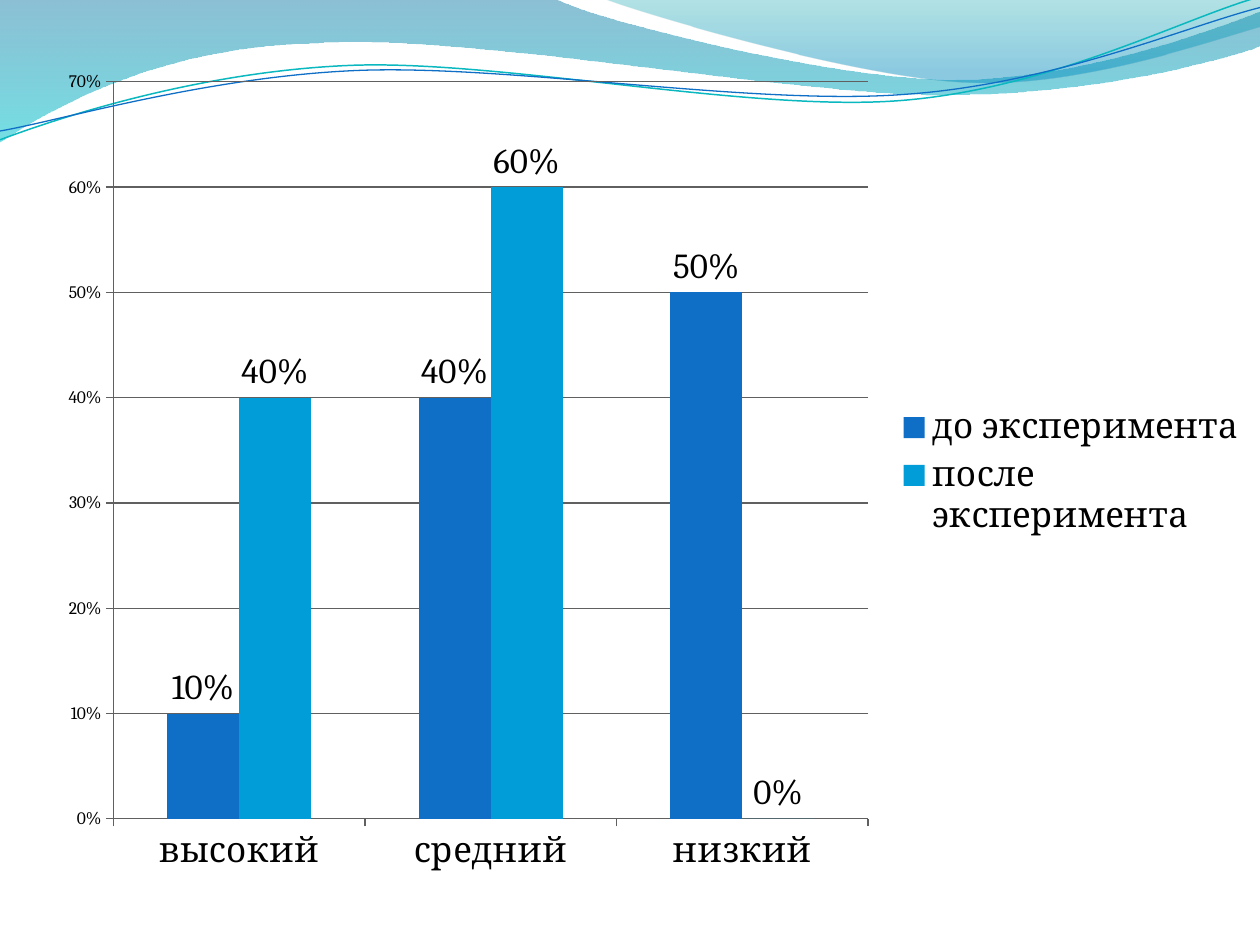
from lxml import etree
from pptx import Presentation
from pptx import util as u
from pptx.chart.data import CategoryChartData
from pptx.dml.color import RGBColor
from pptx.enum import chart as ch
from pptx.oxml import parse_xml
from pptx.oxml.ns import nsdecls, qn

FONT = "Cambria"
CHART_BOX = 0.35, 0.44, 9.65, 6.61  # left, top, width, height in inches
PLOT_BOX = 0.9, 0.65, 5.99, 5.85

# Waves: start point, then (x, y) lines or (x1, y1, x2, y2, x, y) curves, in inches
LEFT_WAVE = [(0, 0), (4.4, -0.01), (4.76, 0.17, 6.64, 0.63, 7.58, 0.63),
             (8.53, 0.63, 9.58, 0.26, 10, 0.09), (10.01, 0.36),
             (9.83, 0.44, 8.7, 0.76, 7.46, 0.75), (6.22, 0.75, 3.82, 0.28, 2.57, 0.34),
             (1.29, 0.36, 0.46, 0.83, -0.01, 1.13)]
RIGHT_WAVE = [(4.79, -0.01), (5.09, 0.11, 6.82, 0.62, 7.69, 0.65),
              (8.56, 0.69, 9.61, 0.32, 10, 0.21), (10, 0)]
TEAL_LINE = [(0, 1.11), (0.48, 0.93, 1.58, 0.57, 2.77, 0.52),
             (3.95, 0.47, 5.93, 0.89, 7.13, 0.8), (8.33, 0.71, 9.38, 0.15, 9.98, -0.02)]
BLUE_LINE = [(0, 1.04), (0.47, 0.96, 1.64, 0.61, 2.83, 0.56),
             (4.03, 0.51, 5.97, 0.84, 7.17, 0.75), (8.36, 0.67, 9.41, 0.21, 10, 0.06)]

LEVELS = ["высокий", "средний", "низкий"]
RESULTS = [("до эксперимента", [0.1, 0.4, 0.5], "0F6FC6"),
           ("после эксперимента", [0.4, 0.6, 0], "009DD9")]


def color(value):
    return RGBColor.from_string(value)


def add_outline(slide, segments, close):
    """Draw all points as lines, then join each curve's three points into a cubic."""
    start, *points = [(u.Inches(x), u.Inches(y)) for segment in segments
                      for x, y in zip(segment[::2], segment[1::2])]
    builder = slide.shapes.build_freeform(*start)
    builder.add_line_segments(points, close=close)
    outline = builder.convert_to_shape()
    outline.shadow.inherit = False

    lines = iter(list(outline.element.spPr.iter(qn("a:lnTo"))))
    for segment in segments[1:]:
        first = next(lines)
        if len(segment) == 6:
            first.tag = qn("a:cubicBezTo")
            for _ in range(2):
                line = next(lines)
                first.append(line[0])
                line.getparent().remove(line)
    return outline


def add_wave(slide, segments, stops):
    """Add a filled wave; stops are (position, colour, opacity in percent)."""
    wave = add_outline(slide, segments, True)
    wave.line.fill.background()
    wave.fill.gradient()
    wave.fill.gradient_angle = 270
    for stop, (position, value, _) in zip(wave.fill.gradient_stops, stops):
        stop.position = position
        stop.color.rgb = color(value)
    shades = wave.element.spPr.iter(qn("a:srgbClr"))
    for shade, (_, _, opacity) in zip(list(shades), stops):
        etree.SubElement(shade, qn("a:alpha"), val=str(opacity * 1000))


def add_wave_line(slide, segments, value, width):
    line = add_outline(slide, segments, False)
    line.fill.background()
    line.line.color.rgb = color(value)
    line.line.width = u.Pt(width)


def style_line(line):
    line.color.rgb = color("606060")
    line.width = u.Pt(0.7)


def style_font(font, size):
    font.name, font.size = FONT, u.Pt(size)
    font.color.rgb = color("000000")


def place_plot(chart):
    """Fix the inner plot area, in shares of the chart's size."""
    left, top, width, height = CHART_BOX
    x, y, w, h = PLOT_BOX
    sides = "".join(f'<c:{tag} val="{value}"/>' for tag, value in (
        ("layoutTarget", "inner"), ("xMode", "edge"), ("yMode", "edge"),
        ("x", (x - left) / width), ("y", (y - top) / height),
        ("w", w / width), ("h", h / height)))
    plot_area = chart.element.chart.plotArea
    for old in plot_area.findall(qn("c:layout")):
        plot_area.remove(old)
    plot_area.insert(0, parse_xml(
        f'<c:layout {nsdecls("c")}><c:manualLayout>{sides}</c:manualLayout></c:layout>'))


def add_results_chart(slide):
    data = CategoryChartData(number_format="0%")
    data.categories = LEVELS
    for name, values, _ in RESULTS:
        data.add_series(name, values)
    chart = slide.shapes.add_chart(ch.XL_CHART_TYPE.COLUMN_CLUSTERED,
                                   *map(u.Inches, CHART_BOX), data).chart
    style_font(chart.font, 10)
    chart.has_title = False
    place_plot(chart)

    # Axes
    levels, shares = chart.category_axis, chart.value_axis
    for axis, size in ((levels, 20), (shares, 10)):
        axis.major_tick_mark = ch.XL_TICK_MARK.OUTSIDE
        axis.minor_tick_mark = ch.XL_TICK_MARK.NONE
        style_line(axis.format.line)
        style_font(axis.tick_labels.font, size)
    shares.minimum_scale, shares.maximum_scale, shares.major_unit = 0, 0.7, 0.1
    shares.has_major_gridlines = True
    style_line(shares.major_gridlines.format.line)
    shares.tick_labels.number_format = "0%"
    shares.tick_labels.number_format_is_linked = False

    # Columns and their labels
    columns = chart.plots[0]
    columns.gap_width, columns.overlap = 150, 0
    columns.vary_by_categories = False
    for series, (_, _, value) in zip(columns.series, RESULTS):
        series.format.fill.solid()
        series.format.fill.fore_color.rgb = color(value)
        labels = series.data_labels
        labels.show_value = True
        labels.number_format, labels.number_format_is_linked = "0%", False
        labels.position = ch.XL_LABEL_POSITION.OUTSIDE_END
        style_font(labels.font, 20)

    # Legend
    chart.has_legend = True
    chart.legend.position = ch.XL_LEGEND_POSITION.RIGHT
    chart.legend.include_in_layout = False
    style_font(chart.legend.font, 20)


def main():
    deck = Presentation()
    deck.slide_width, deck.slide_height = u.Inches(10), u.Inches(7.5)
    slide = deck.slides.add_slide(deck.slide_layouts[6])

    # Wave decoration
    add_wave(slide, LEFT_WAVE, [(0, "0074A1", 45), (1, "00C6CF", 55)])
    add_wave(slide, RIGHT_WAVE, [(0, "00A1A9", 30), (0.8, "008BBF", 45)])
    add_wave_line(slide, TEAL_LINE, "0AB8BF", 0.85)
    add_wave_line(slide, BLUE_LINE, "0F6FC6", 0.75)

    add_results_chart(slide)
    deck.save("out.pptx")


if __name__ == "__main__":
    main()
